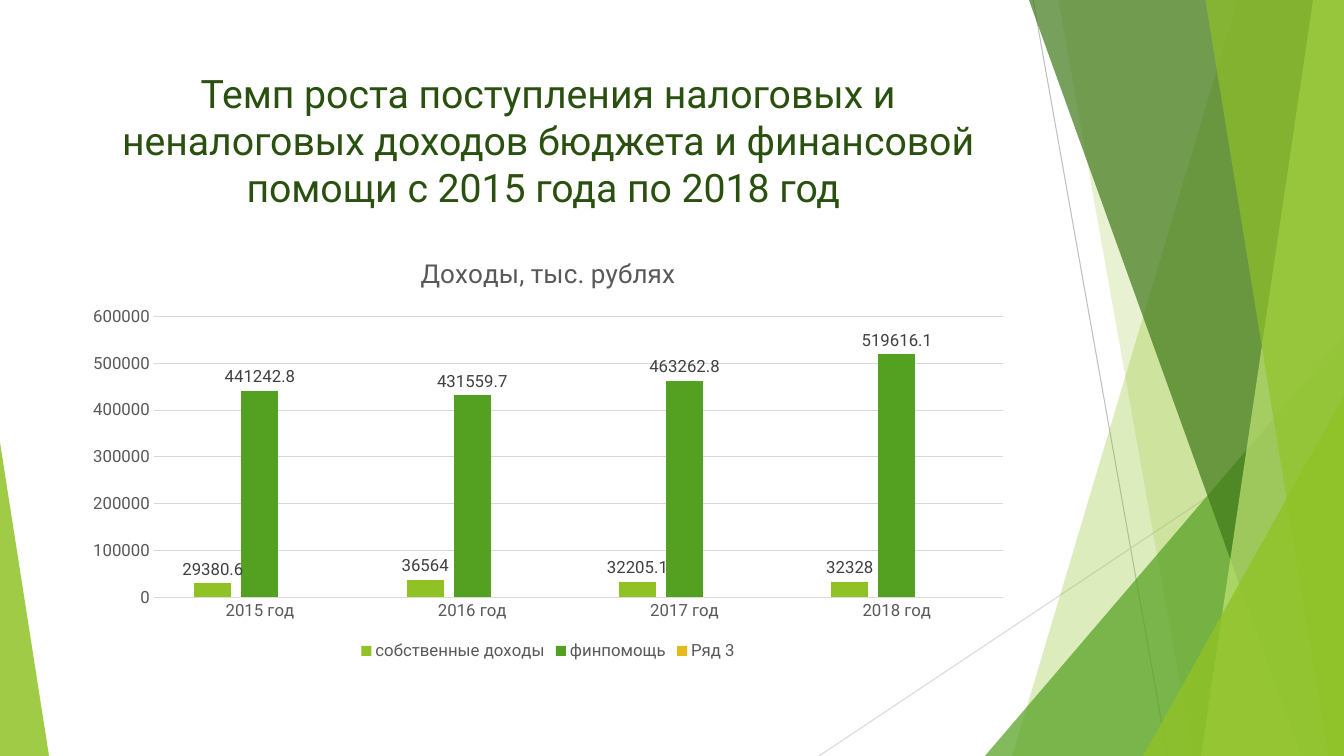
from lxml import etree
from pptx import Presentation
from pptx.chart.data import CategoryChartData
from pptx.dml.color import RGBColor
from pptx.enum.chart import XL_CHART_TYPE, XL_LABEL_POSITION, XL_LEGEND_POSITION, XL_TICK_MARK
from pptx.enum.shapes import MSO_CONNECTOR, MSO_SHAPE
from pptx.enum.text import MSO_ANCHOR, MSO_AUTO_SIZE, PP_ALIGN
from pptx.oxml.ns import qn
from pptx.util import Pt

COLUMN = XL_CHART_TYPE.COLUMN_CLUSTERED
ABOVE = XL_LABEL_POSITION.OUTSIDE_END
BOTTOM = XL_LEGEND_POSITION.BOTTOM
NO_TICK = XL_TICK_MARK.NONE
STRAIGHT = MSO_CONNECTOR.STRAIGHT
TRIANGLE = MSO_SHAPE.ISOSCELES_TRIANGLE
MIDDLE = MSO_ANCHOR.MIDDLE
NO_FIT = MSO_AUTO_SIZE.NONE
CENTER = PP_ALIGN.CENTER

WIDE, HIGH = 960, 540
FONT = "Roboto"
COLORS = {
    "lime": "90C226", "green": "54A021", "forest": "3F7819", "pale": "C0E474",
    "gold": "E6B91E", "title": "2A5010", "text": "595959", "label": "404040",
    "grid": "D9D9D9", "line": "BFBFBF",
}
YEARS = ["2015 год", "2016 год", "2017 год", "2018 год"]
SERIES = [
    ("собственные доходы", "lime", [29380.6, 36564, 32205.1, 32328]),
    ("финпомощь", "green", [441242.8, 431559.7, 463262.8, 519616.1]),
    ("Ряд 3", "gold", [None] * 4),
]


class Deck:
    """Holds the style and the current slide."""

    def __init__(self):
        self.prs = Presentation()
        self.prs.slide_width, self.prs.slide_height = Pt(WIDE), Pt(HIGH)
        self.slide = self.prs.slides.add_slide(self.prs.slide_layouts[5])
        self.shapes = self.slide.shapes

    def color(self, name):
        return RGBColor.from_string(COLORS[name])

    def style(self, font, size, name):
        font.name, font.size, font.bold = FONT, Pt(size), False
        font.color.rgb = self.color(name)

    def stroke(self, line, name):
        line.width = Pt(0.75)
        line.color.rgb = self.color(name)

    def tint(self, shape, name, alpha):
        shape.shadow.inherit = False
        shape.line.fill.background()
        shape.fill.solid()
        shape.fill.fore_color.rgb = self.color(name)
        clr = next(shape._element.spPr.iter(qn("a:srgbClr")))
        etree.SubElement(clr, qn("a:alpha"), val=str(alpha * 1000))

    def line(self, start, end, name):
        line = self.shapes.add_connector(STRAIGHT, *map(Pt, start + end))
        self.stroke(line.line, name)
        etree.SubElement(line._element.spPr, qn("a:effectLst"))

    def band(self, top, base, name, alpha):
        form = self.shapes.build_freeform(Pt(top), 0)
        form.add_line_segments([(Pt(WIDE), 0), (Pt(WIDE), Pt(HIGH)), (Pt(base), Pt(HIGH))])
        self.tint(form.convert_to_shape(), name, alpha)

    def wedge(self, left, top, width, peak, name, alpha):
        shape = self.shapes.add_shape(TRIANGLE, Pt(left), Pt(top), Pt(width), Pt(HIGH - top))
        shape.adjustments[0] = peak
        self.tint(shape, name, alpha)

    def title(self, box, text):
        head = self.shapes.title
        head.left, head.top, head.width, head.height = map(Pt, box)
        frame = head.text_frame
        frame.word_wrap, frame.auto_size = True, NO_FIT
        frame.vertical_anchor = MIDDLE
        para = frame.paragraphs[0]
        para.alignment = CENTER
        run = para.add_run()
        run.text = text
        self.style(run.font, 28, "title")

    def chart(self, box, text, cats, rows):
        data = CategoryChartData()
        data.categories = cats
        for name, _, vals in rows:
            data.add_series(name, vals)
        chart = self.shapes.add_chart(COLUMN, *map(Pt, box), data).chart
        self.style(chart.font, 12, "text")
        chart.has_title = True
        run = chart.chart_title.text_frame.paragraphs[0].add_run()
        run.text = text
        self.style(run.font, 18.6, "text")
        chart.has_legend = True
        chart.legend.position = BOTTOM
        chart.legend.include_in_layout = False
        self.style(chart.legend.font, 12, "text")

        for axis in (chart.category_axis, chart.value_axis):
            axis.major_tick_mark = axis.minor_tick_mark = NO_TICK
            self.style(axis.tick_labels.font, 12, "text")
        self.stroke(chart.category_axis.format.line, "grid")
        axis = chart.value_axis
        axis.format.line.fill.background()
        axis.minimum_scale, axis.maximum_scale, axis.major_unit = 0, 600000, 100000
        self.stroke(axis.major_gridlines.format.line, "grid")

        plot = chart.plots[0]
        plot.gap_width, plot.overlap, plot.vary_by_categories = 219, -27, False
        for bars, (_, name, vals) in zip(plot.series, rows):
            bars.format.fill.solid()
            bars.format.fill.fore_color.rgb = self.color(name)
            if any(vals):
                tags = bars.data_labels
                tags.show_value, tags.position = True, ABOVE
                self.style(tags.font, 12, "label")


def main():
    deck = Deck()
    deck.line((738, 0), (834, HIGH), "line")
    deck.line((WIDE, 290), (585, HIGH), "grid")
    deck.band(884, 723, "lime", 30)
    deck.band(756, 852, "lime", 20)
    deck.wedge(703.5, 240, 256.5, 1, "green", 72)
    deck.band(735, 929.5, "forest", 70)
    deck.band(938, 858, "pale", 70)
    deck.band(861, 949, "lime", 65)
    deck.wedge(816.5, 283, 143.5, 1, "lime", 80)
    deck.wedge(0, 316, 35, 0, "lime", 85)
    deck.title((53, 48, 677, 104), "Темп роста поступления налоговых и неналоговых доходов "
               "бюджета и финансовой помощи с 2015 года по 2018 год ")
    deck.chart((53, 170, 677, 305), "Доходы, тыс. рублях", YEARS, SERIES)
    deck.prs.save("out.pptx")


if __name__ == "__main__":
    main()
